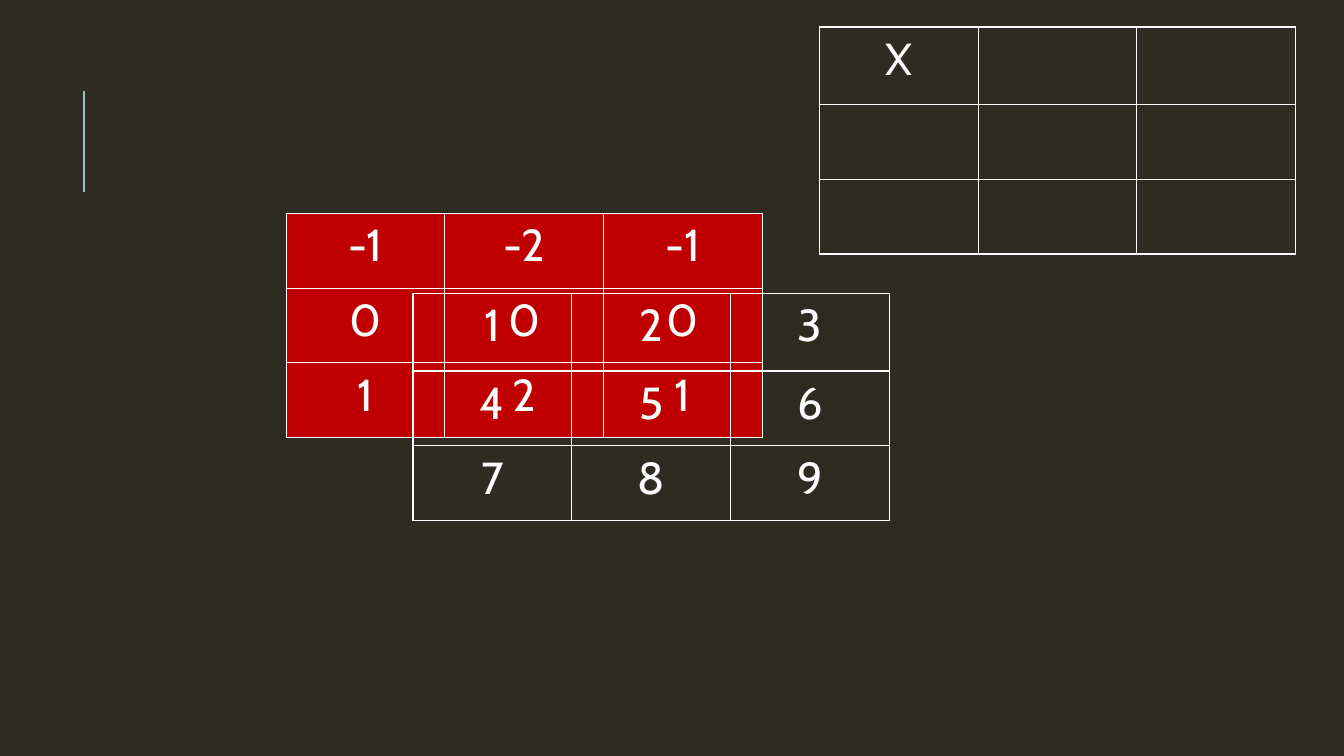
from lxml import etree
from pptx import Presentation
from pptx.dml.color import RGBColor
from pptx.enum.shapes import MSO_CONNECTOR
from pptx.enum.text import PP_ALIGN
from pptx.oxml.ns import qn
from pptx.util import Cm, Pt

STRAIGHT = MSO_CONNECTOR.STRAIGHT
CENTER = PP_ALIGN.CENTER

BACKGROUND = RGBColor(0x2E, 0x2B, 0x21)
ACCENT = RGBColor(0x9C, 0xBE, 0xBD)
RED = RGBColor(0xC0, 0x00, 0x00)
WHITE = RGBColor(0xFF, 0xFF, 0xFF)

FONT = "Cabin"
COLUMN_WIDTH = Cm(4)
ROW_HEIGHT = Cm(1.88)
TALL_ROW_HEIGHT = Cm(1.96)

KERNEL = [["-1", "-2", "-1"], ["0", "0", "0"], ["1", "2", "1"]]
IMAGE_VALUES = [["1", "2", "3"], ["4", "5", "6"], ["7", "8", "9"]]
RESULT = [["X", "", ""], ["", "", ""], ["", "", ""]]


def add_cell_borders(cell):
    """Draw all four sides; call before filling, as the schema puts lines first."""
    properties = cell._tc.get_or_add_tcPr()
    for side in ("a:lnL", "a:lnR", "a:lnT", "a:lnB"):
        line = etree.SubElement(properties, qn(side), w=str(Pt(1)))
        fill = etree.SubElement(line, qn("a:solidFill"))
        etree.SubElement(fill, qn("a:srgbClr"), val=str(WHITE))


def format_cell(cell, text, fill_color):
    add_cell_borders(cell)
    if fill_color is None:
        cell.fill.background()
    else:
        cell.fill.solid()
        cell.fill.fore_color.rgb = fill_color
    para = cell.text_frame.paragraphs[0]
    para.text = text
    para.alignment = CENTER
    para.font.size = Pt(32)
    for span in para.runs:
        span.font.name = FONT
        span.font.size = Pt(32)
        span.font.color.rgb = WHITE


def add_matrix(page, left, top, values, first_row_height, fill_color=None):
    heights = [first_row_height] + [ROW_HEIGHT] * (len(values) - 1)
    columns = len(values[0])
    frame = page.shapes.add_table(len(values), columns, left, top,
                                  COLUMN_WIDTH * columns, sum(heights))
    table = frame.table
    table.first_row = False
    table.horz_banding = False
    for column in table.columns:
        column.width = COLUMN_WIDTH
    for row, height, texts in zip(table.rows, heights, values):
        row.height = height
        for cell, text in zip(row.cells, texts):
            format_cell(cell, text, fill_color)


def add_accent_line(page, left, top, height):
    line = page.shapes.add_connector(STRAIGHT, left, top + height, left, top)
    line.line.color.rgb = ACCENT
    line.line.width = Pt(1.5)
    etree.SubElement(line._element.spPr, qn("a:effectLst"))


def build_convolution_page(deck):
    page = deck.slides.add_slide(deck.slide_layouts[6])
    page.background.fill.solid()
    page.background.fill.fore_color.rgb = BACKGROUND
    add_accent_line(page, Cm(2.11), Cm(2.29), Cm(2.54))
    add_matrix(page, Cm(7.21), Cm(5.38), KERNEL, ROW_HEIGHT, RED)
    add_matrix(page, Cm(10.41), Cm(7.39), IMAGE_VALUES, TALL_ROW_HEIGHT)
    add_matrix(page, Cm(20.65), Cm(0.68), RESULT, TALL_ROW_HEIGHT)


def main():
    deck = Presentation()
    deck.slide_width = Cm(33.87)
    deck.slide_height = Cm(19.05)
    build_convolution_page(deck)
    deck.save("out.pptx")


if __name__ == "__main__":
    main()
